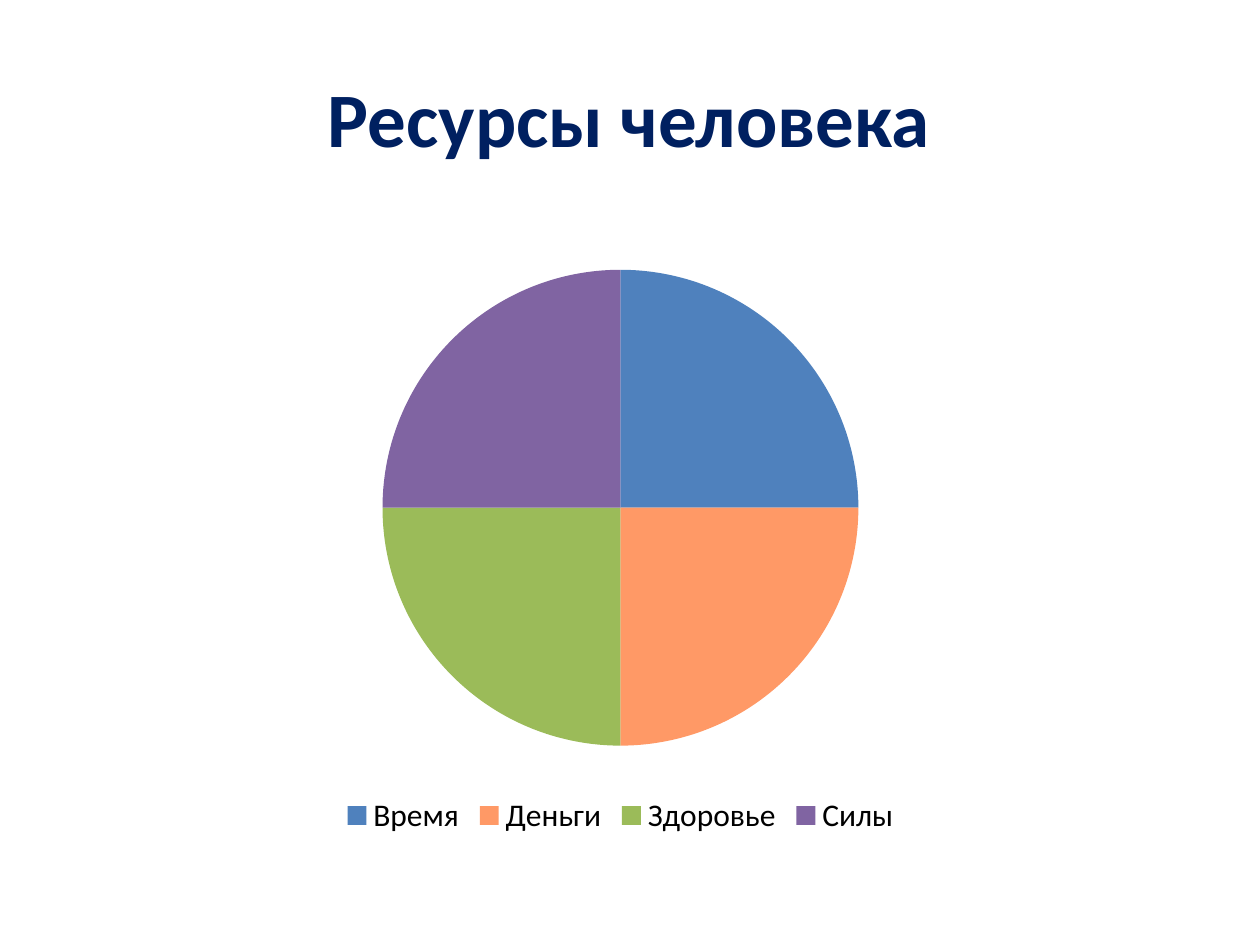
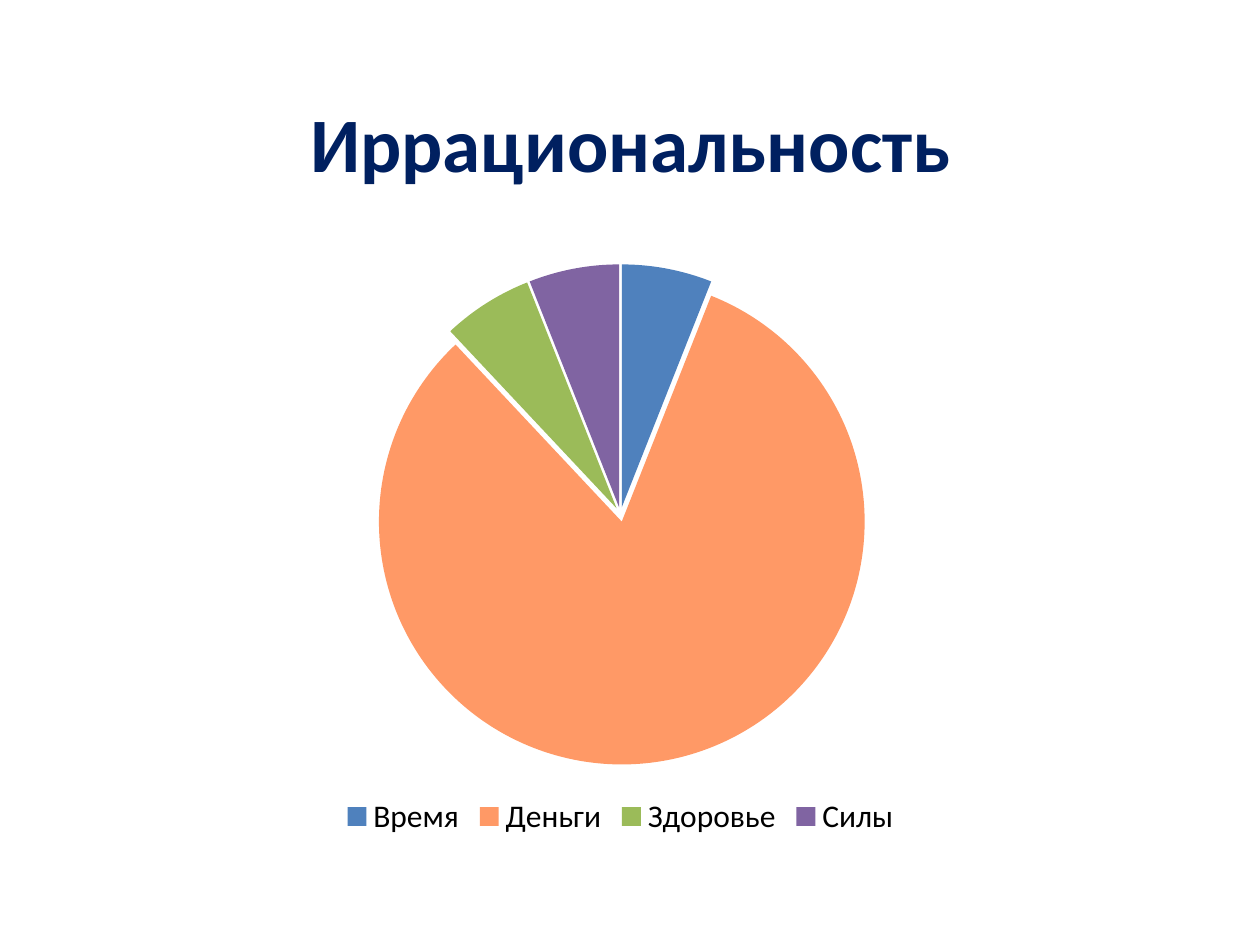
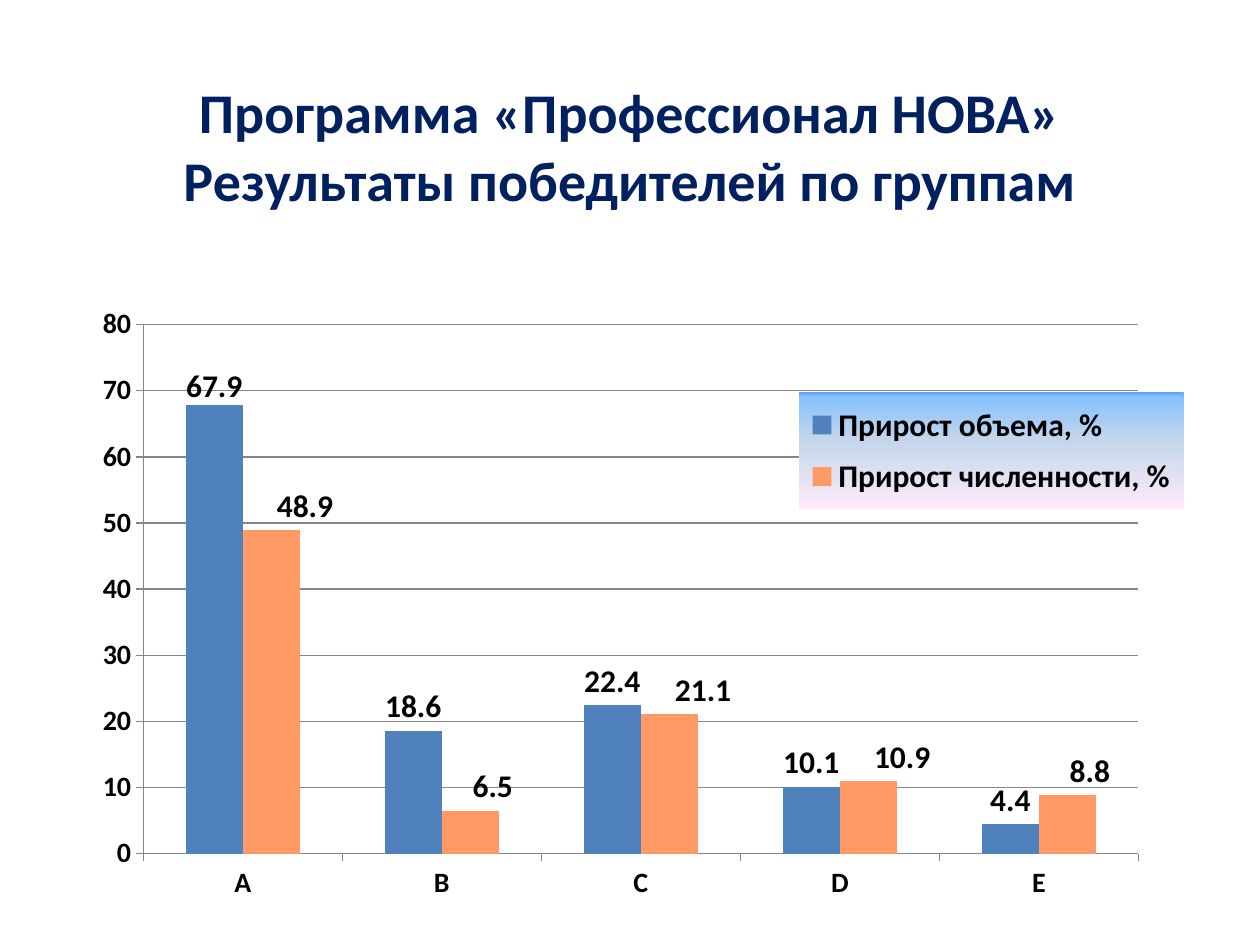
from lxml import etree
from pptx import Presentation
from pptx.chart.data import CategoryChartData
from pptx.dml.color import RGBColor
from pptx.enum.chart import XL_CHART_TYPE, XL_LABEL_POSITION, XL_LEGEND_POSITION, XL_TICK_MARK
from pptx.enum.text import MSO_ANCHOR, PP_ALIGN
from pptx.oxml import parse_xml
from pptx.oxml.ns import nsdecls, qn
from pptx.util import Emu, Pt

PIE, COLUMNS = XL_CHART_TYPE.PIE, XL_CHART_TYPE.COLUMN_CLUSTERED
BOTTOM, RIGHT = XL_LEGEND_POSITION.BOTTOM, XL_LEGEND_POSITION.RIGHT
OUTSIDE_END = XL_LABEL_POSITION.OUTSIDE_END
TICK_OUT = XL_TICK_MARK.OUTSIDE

EMU_PER_PX = 914400 / 126
FONT = "Calibri"
NAVY, BLACK, GREY = "002060", "000000", "868686"
PALETTE = ["4F81BD", "FF9966", "9BBB59", "8064A2"]
TITLE_SIZE = (1134, 158)

RESOURCES = ["Время", "Деньги", "Здоровье", "Силы"]
PIES = [
    {"title": "Ресурсы человека", "title_at": (62, 38), "chart_at": (184, 246, 873, 595),
     "shares": [25, 25, 25, 25], "plot": (0.02, 0.04, 0.96, 0.8), "explosion": 0},
    {"title": "Иррациональность", "title_at": (64, 63), "chart_at": (184, 247, 873, 595),
     "shares": [6, 82, 6, 6], "plot": None, "explosion": 3},
]

GROUPS_TITLE = "Программа «Профессионал НОВА»\nРезультаты победителей по группам"
GROUPS = ["A", "B", "C", "D", "E"]
GROWTH = {
    "Прирост объема, %": [67.9, 18.6, 22.4, 10.1, 4.4],
    "Прирост численности, %": [48.9, 6.5, 21.1, 10.9, 8.8],
}
# Label shifts as parts of the chart size: (series, point) -> (right, down)
LABEL_SHIFTS = {
    (0, 0): (0, 0.01),
    (1, 0): (0.03, 0), (1, 1): (0.02, 0), (1, 2): (0.03, 0), (1, 3): (0.03, 0), (1, 4): (0.02, 0),
}
GROUPS_PLOT = (0.07, 0.05, 0.88, 0.86)
GROUPS_LEGEND = (0.65, 0.16, 0.34, 0.19)
LEGEND_STOPS = [(0, "5E9EFF"), (4, "85C2FF"), (40, "C4D6EB"), (100, "FFEBFA")]


def px(*lengths):
    return [Emu(round(n * EMU_PER_PX)) for n in lengths]


def rgb(code):
    return RGBColor.from_string(code)


def style_font(font, size, color=BLACK, bold=False):
    for name, value in {"name": FONT, "size": Pt(size), "bold": bold}.items():
        setattr(font, name, value)
    font.color.rgb = rgb(color)


def fill_with(fmt, color):
    fmt.fill.solid()
    fmt.fill.fore_color.rgb = rgb(color)


def layout_xml(values, inner=False, edge=True):
    """Manual chart layout; with edge off, x and y are shifts from the default place."""
    layout = parse_xml(f"<c:layout {nsdecls('c')}><c:manualLayout/></c:layout>")
    parts = [("layoutTarget", "inner")] if inner else []
    if edge:
        parts += [("xMode", "edge"), ("yMode", "edge")]
    parts += zip("xywh", values)
    for tag, value in parts:
        etree.SubElement(layout[0], qn(f"c:{tag}")).set("val", str(value))
    return layout


def place_plot(chart, values):
    plot_area = chart.plots[0]._element.getparent()
    for old in plot_area.findall(qn("c:layout")):
        plot_area.remove(old)
    plot_area.insert(0, layout_xml(values, inner=True))


def add_title(s, text, at, size):
    tf = s.shapes.add_textbox(*px(*at, *TITLE_SIZE)).text_frame
    tf.word_wrap, tf.vertical_anchor = True, MSO_ANCHOR.MIDDLE
    p = tf.paragraphs[0]
    p.text, p.alignment = text, PP_ALIGN.CENTER
    for r in p.runs:
        style_font(r.font, size, NAVY, True)


def add_chart(s, kind, at, categories, series, legend_at, size):
    data = CategoryChartData()
    data.categories = categories
    for name, values in series.items():
        data.add_series(name, values)
    chart = s.shapes.add_chart(kind, *px(*at), data).chart
    chart.has_title = False
    style_font(chart.font, size)
    chart.has_legend = True
    chart.legend.position = legend_at
    chart.legend.include_in_layout = False
    return chart


def add_pie_slide(s, pie):
    add_title(s, pie["title"], pie["title_at"], 44)
    chart = add_chart(s, PIE, pie["chart_at"], RESOURCES, {"Series 1": pie["shares"]}, BOTTOM, 18)
    series = chart.plots[0].series[0]
    for i, color in enumerate(PALETTE):
        fill_with(series.points[i].format, color)
    if pie["explosion"]:
        explosion = parse_xml(f'<c:explosion {nsdecls("c")} val="{pie["explosion"]}"/>')
        series._element.find(qn("c:dPt")).addprevious(explosion)
    if pie["plot"]:
        place_plot(chart, pie["plot"])


def style_groups_legend(legend):
    style_font(legend.font, 18, bold=True)
    stops = "".join(f'<a:gs pos="{pos * 1000}"><a:srgbClr val="{color}"/></a:gs>'
                    for pos, color in LEGEND_STOPS)
    overlay = legend._element.find(qn("c:overlay"))
    overlay.addprevious(layout_xml(GROUPS_LEGEND))
    overlay.addnext(parse_xml(
        f"<c:spPr {nsdecls('c', 'a')}><a:gradFill><a:gsLst>{stops}</a:gsLst>"
        '<a:lin ang="5400000" scaled="0"/></a:gradFill></c:spPr>'))


def label_columns(series, shifts):
    labels = series.data_labels
    labels.show_value, labels.position = True, OUTSIDE_END
    style_font(labels.font, 18, bold=True)
    for point, shift in shifts.items():
        label = series.points[point].data_label
        label.position = OUTSIDE_END
        style_font(label.font, 18, bold=True)
    for dlbl in labels._element.findall(qn("c:dLbl")):
        idx = dlbl.find(qn("c:idx"))
        idx.addnext(layout_xml(shifts[int(idx.get("val"))], edge=False))


def add_groups_slide(s):
    add_title(s, GROUPS_TITLE, (63, 66), 32)
    chart = add_chart(s, COLUMNS, (64, 294, 1131, 615), GROUPS, GROWTH, RIGHT, 10)
    place_plot(chart, GROUPS_PLOT)
    style_groups_legend(chart.legend)

    value_axis = chart.value_axis
    scale = {"minimum_scale": 0, "maximum_scale": 80, "major_unit": 10, "has_major_gridlines": True}
    for name, value in scale.items():
        setattr(value_axis, name, value)
    for axis in (chart.category_axis, value_axis):
        axis.major_tick_mark = TICK_OUT
        style_font(axis.tick_labels.font, 16, bold=True)
    for item in (chart.category_axis, value_axis, value_axis.major_gridlines):
        item.format.line.color.rgb = rgb(GREY)
        item.format.line.width = Pt(0.75)

    plot = chart.plots[0]
    plot.gap_width, plot.overlap, plot.vary_by_categories = 150, 0, False
    for i, series in enumerate(plot.series):
        fill_with(series.format, PALETTE[i])
        label_columns(series, {point: shift for (row, point), shift in LABEL_SHIFTS.items() if row == i})


def main():
    prs = Presentation()
    prs.slide_width, prs.slide_height = px(1260, 945)
    blank = prs.slide_layouts[6]
    for pie in PIES:
        add_pie_slide(prs.slides.add_slide(blank), pie)
    add_groups_slide(prs.slides.add_slide(blank))
    prs.save("out.pptx")


if __name__ == "__main__":
    main()
